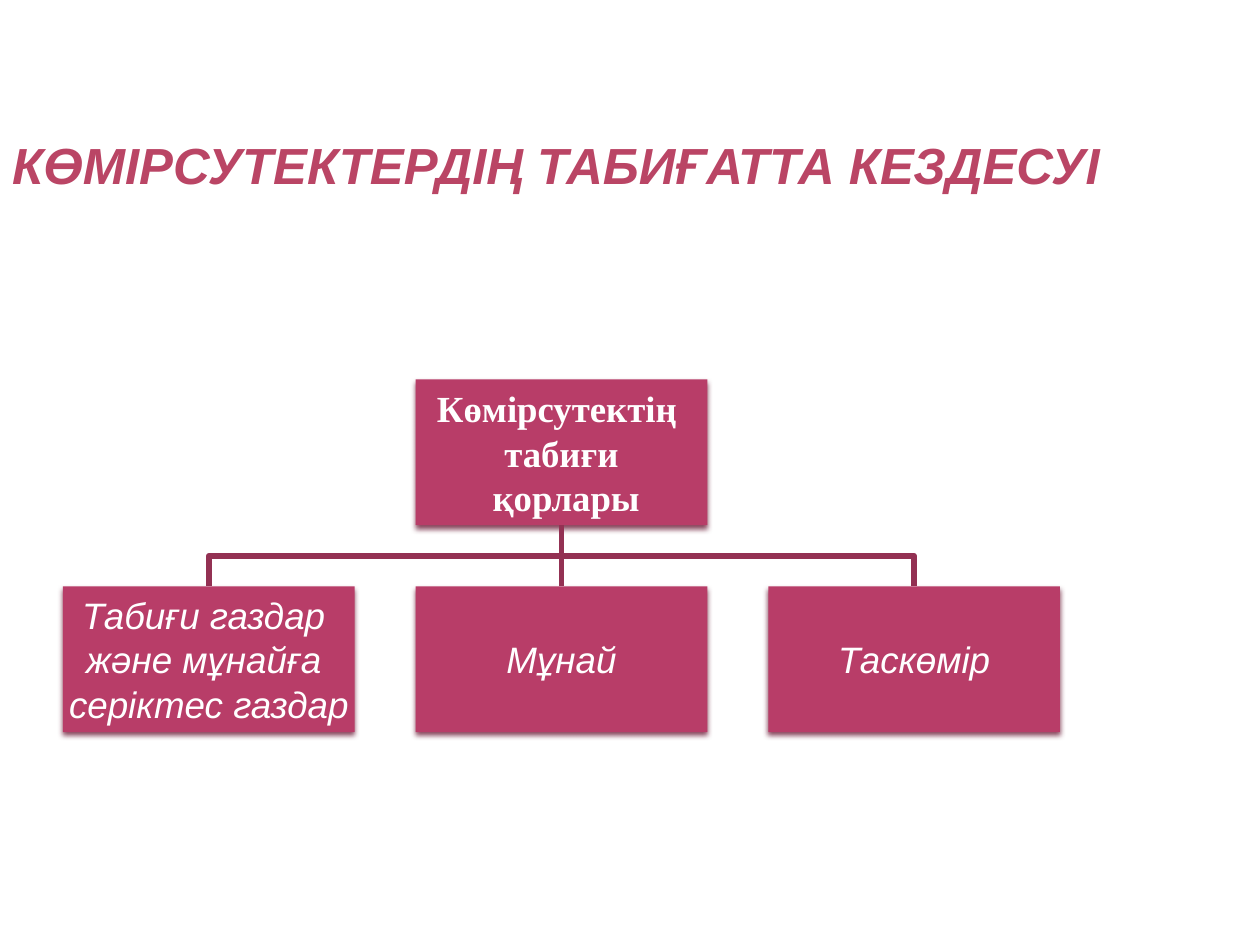
from dataclasses import dataclass

import lxml.etree
import pptx
import pptx.dml.color
import pptx.enum.shapes
import pptx.enum.text
import pptx.oxml
import pptx.oxml.ns
import pptx.util
from pptx.util import Cm


@dataclass(frozen=True)
class Theme:
    box_fill: str = "B83D68"
    branch: str = "933153"
    shadow: str = "722640"
    box_text: str = "FFFFFF"
    title_stops: tuple = ((0, "C76F85"), (49, "BA4565"), (50, "A82352"), (92, "91244A"), (100, "8F2349"))
    title_size: int = 29
    box_size: int = 21
    branch_width: float = 3.15
    heading_font: str = "Times New Roman"
    body_font: str = "Arial"


@dataclass(frozen=True)
class Node:
    lines: tuple
    left: float
    top: float
    font: str
    bold: bool = False
    italic: bool = False


THEME = Theme()
NODE_WIDTH, NODE_HEIGHT = 5.88, 2.94
FIRST_LEFT, COLUMN_STEP = 1.27, 7.11
ROOT_TOP, SOURCE_TOP = 7.65, 11.82
ROOT = Node(("Көмірсутектің ", "табиғи", " қорлары"), FIRST_LEFT + COLUMN_STEP, ROOT_TOP,
            THEME.heading_font, bold=True)
SOURCES = (
    ("Табиғи газдар ", "және мұнайға ", "серіктес газдар"),
    ("Мұнай",),
    ("Таскөмір",),
)


def rgb(code: str) -> pptx.dml.color.RGBColor:
    return pptx.dml.color.RGBColor.from_string(code)


def drawing_xml(tag: str, content: str = "", attributes: str = "") -> lxml.etree._Element:
    return pptx.oxml.parse_xml(f'<a:{tag} {pptx.oxml.ns.nsdecls("a")} {attributes}>{content}</a:{tag}>')


def write_lines(frame, lines: tuple, *, font: str, size: float, color: str | None = None,
                bold: bool = False, italic: bool = False) -> None:
    frame.word_wrap = True
    for index, line in enumerate(lines):
        paragraph = frame.paragraphs[0] if index == 0 else frame.add_paragraph()
        paragraph.alignment = pptx.enum.text.PP_ALIGN.CENTER
        run = paragraph.add_run()
        run.text = line
        run.font.name, run.font.size = font, pptx.util.Pt(size)
        run.font.bold, run.font.italic = bold, italic
        if color:
            run.font.fill.solid()
            run.font.fill.fore_color.rgb = rgb(color)


def draw_title(slide, text: str) -> None:
    title = slide.shapes.title
    title.left, title.top, title.width, title.height = Cm(-0.63), Cm(2.54), Cm(23.7), Cm(1.55)
    frame = title.text_frame
    write_lines(frame, (text,), font=THEME.body_font, size=THEME.title_size, bold=True, italic=True)
    frame.auto_size = pptx.enum.text.MSO_AUTO_SIZE.SHAPE_TO_FIT_TEXT
    stops = "".join(f'<a:gs pos="{position * 1000}"><a:srgbClr val="{color}"/></a:gs>'
                    for position, color in THEME.title_stops)
    gradient = drawing_xml("gradFill", f'<a:gsLst>{stops}</a:gsLst><a:lin ang="5400000" scaled="0"/>')
    frame.paragraphs[0].runs[0].font._element.insert(0, gradient)


def draw_node(slide, node: Node):
    box = slide.shapes.add_shape(pptx.enum.shapes.MSO_SHAPE.RECTANGLE, Cm(node.left), Cm(node.top),
                                 Cm(NODE_WIDTH), Cm(NODE_HEIGHT))
    box.fill.solid()
    box.fill.fore_color.rgb = rgb(THEME.box_fill)
    box.line.fill.background()
    shadow = drawing_xml("outerShdw",
                         f'<a:srgbClr val="{THEME.shadow}"><a:alpha val="83000"/></a:srgbClr>',
                         'blurRad="39370" dist="25400" dir="5400000" rotWithShape="0"')
    effects = drawing_xml("effectLst")
    effects.append(shadow)
    box._element.spPr.append(effects)
    frame = box.text_frame
    frame.margin_left = frame.margin_right = frame.margin_top = frame.margin_bottom = Cm(0.03)
    frame.vertical_anchor = pptx.enum.text.MSO_ANCHOR.MIDDLE
    write_lines(frame, node.lines, font=node.font, size=THEME.box_size, color=THEME.box_text,
                bold=node.bold, italic=node.italic)
    return box


def style_branch(branch) -> None:
    branch.line.color.rgb = rgb(THEME.branch)
    branch.line.width = pptx.util.Pt(THEME.branch_width)


def draw_trunk(slide, root, source) -> None:
    trunk = slide.shapes.add_connector(pptx.enum.shapes.MSO_CONNECTOR.STRAIGHT, 0, 0, 0, 0)
    trunk.begin_connect(root, 2)
    trunk.end_connect(source, 0)
    style_branch(trunk)
    trunk._element.spPr.append(drawing_xml("effectLst"))


def draw_side_branch(slide, source_left: float) -> None:
    start_x, end_x = (Cm(left + NODE_WIDTH / 2) for left in (ROOT.left, source_left))
    start_y, end_y = Cm(ROOT_TOP + NODE_HEIGHT), Cm(SOURCE_TOP)
    middle_y = (start_y + end_y) // 2
    outline = slide.shapes.build_freeform(start_x, start_y)
    outline.add_line_segments(((start_x, middle_y), (end_x, middle_y), (end_x, end_y)), close=False)
    branch = outline.convert_to_shape()
    branch.fill.background()
    branch.shadow.inherit = False
    style_branch(branch)


def main() -> None:
    """Build the slide on natural sources of hydrocarbons."""
    presentation = pptx.Presentation()
    presentation.slide_width, presentation.slide_height = Cm(25.4), Cm(19.05)
    slide = presentation.slides.add_slide(presentation.slide_layouts[5])
    draw_title(slide, "КӨМІРСУТЕКТЕРДІҢ ТАБИҒАТТА КЕЗДЕСУІ")
    nodes = [Node(lines, FIRST_LEFT + column * COLUMN_STEP, SOURCE_TOP, THEME.body_font, italic=True)
             for column, lines in enumerate(SOURCES)]
    for outer in (nodes[0], nodes[-1]):
        draw_side_branch(slide, outer.left)
    root = draw_node(slide, ROOT)
    boxes = [draw_node(slide, node) for node in nodes]
    draw_trunk(slide, root, boxes[1])
    presentation.save("out.pptx")


if __name__ == "__main__":
    main()
